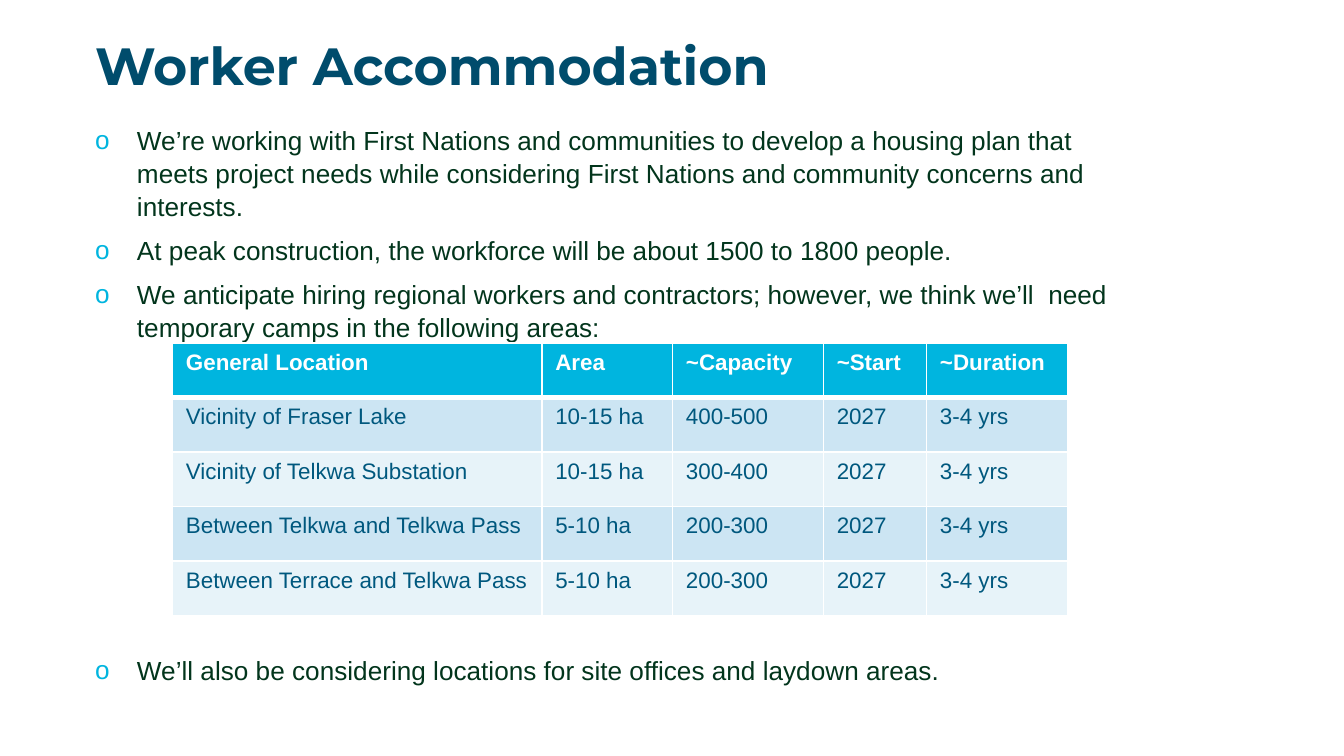
from lxml.etree import SubElement
from pptx import Presentation
from pptx.dml.color import RGBColor
from pptx.oxml.ns import qn
from pptx.util import Cm, Pt

NAVY = RGBColor(0x00, 0x4C, 0x6C)
GREEN = RGBColor(0x02, 0x35, 0x1C)
CYAN = RGBColor(0x00, 0xB5, 0xDF)
BLUE = RGBColor(0x00, 0x58, 0x7E)
LIGHT = RGBColor(0xCC, 0xE5, 0xF3)
PALE = RGBColor(0xE7, 0xF3, 0xF9)
WHITE = RGBColor(0xFF, 0xFF, 0xFF)

TITLE_FORMAT = {"name": "Montserrat", "size": Pt(28), "bold": True}
BODY_FORMAT = {"name": "Arial", "size": Pt(14), "bold": False}
HEADER_FORMAT = {"name": "Arial", "size": Pt(12), "bold": True}
CELL_FORMAT = {"name": "Arial", "size": Pt(12), "bold": False}
SPACING = {"space_before": Pt(3), "space_after": Pt(3), "line_spacing": 1.05}


def write(paragraph, text, format_values, color):
    run = paragraph.add_run()
    run.text = text
    for name, value in format_values.items():
        setattr(run.font, name, value)
    run.font.color.rgb = color


def add_border(cell, side, width):
    line = SubElement(cell._tc.get_or_add_tcPr(), qn(f"a:{side}"), w=str(Pt(width)))
    fill = SubElement(line, qn("a:solidFill"))
    SubElement(fill, qn("a:srgbClr"), val=str(WHITE))


presentation = Presentation()
presentation.slide_width = Cm(25.4)
presentation.slide_height = Cm(14.28)
slide = presentation.slides.add_slide(presentation.slide_layouts[6])

title = slide.shapes.add_textbox(Cm(1.55), Cm(0.5), Cm(21.4), Cm(2.15))
title.text_frame.word_wrap = True
write(title.text_frame.paragraphs[0], "Worker Accommodation", TITLE_FORMAT, NAVY)

points = [
    "We’re working with First Nations and communities to develop a housing plan that meets "
    "project needs while considering First Nations and community concerns and interests.",
    "At peak construction, the workforce will be about 1500 to 1800 people.",
    "We anticipate hiring regional workers and contractors; however, we think we’ll  need "
    "temporary camps in the following areas:",
    "We’ll also be considering locations for site offices and laydown areas.",
]
body = slide.shapes.add_textbox(Cm(1.55), Cm(2.2), Cm(19.86), Cm(11.4))
frame = body.text_frame
frame.word_wrap = True
for index, point in enumerate(points):
    paragraph = frame.add_paragraph() if index else frame.paragraphs[0]
    properties = paragraph._p.get_or_add_pPr()
    properties.set("marL", str(Cm(0.79)))
    properties.set("indent", str(Cm(-0.79)))
    bullet_color = SubElement(properties, qn("a:buClr"))
    SubElement(bullet_color, qn("a:srgbClr"), val=str(CYAN))
    SubElement(properties, qn("a:buFont"), typeface="Arial")
    SubElement(properties, qn("a:buChar"), char="o")
    for name, value in SPACING.items():
        setattr(paragraph, name, value)
    write(paragraph, point, BODY_FORMAT, GREEN)
frame.paragraphs[0].space_before = Pt(0)
frame.paragraphs[-1].space_before = Pt(163)

camps = [
    ("General Location", "Area", "~Capacity", "~Start", "~Duration"),
    ("Vicinity of Fraser Lake", "10-15 ha", "400-500", "2027", "3-4 yrs"),
    ("Vicinity of Telkwa Substation", "10-15 ha", "300-400", "2027", "3-4 yrs"),
    ("Between Telkwa and Telkwa Pass", "5-10 ha", "200-300", "2027", "3-4 yrs"),
    ("Between Terrace and Telkwa Pass", "5-10 ha", "200-300", "2027", "3-4 yrs"),
]
column_widths = [6.98, 2.47, 2.85, 1.95, 2.67]
row_height = 1.03
table = slide.shapes.add_table(
    len(camps), len(column_widths), Cm(3.26), Cm(6.48),
    Cm(sum(column_widths)), Cm(row_height * len(camps)),
).table
for column, width in zip(table.columns, column_widths):
    column.width = Cm(width)
for row_index, camp in enumerate(camps):
    table.rows[row_index].height = Cm(row_height)
    header = row_index == 0
    fill_color = CYAN if header else (PALE, LIGHT)[row_index % 2]
    for column_index, text in enumerate(camp):
        cell = table.cell(row_index, column_index)
        add_border(cell, "lnL", 1)
        add_border(cell, "lnR", 1)
        add_border(cell, "lnT", 3 if row_index == 1 else 1)
        add_border(cell, "lnB", 3 if header else 1)
        cell.fill.solid()
        cell.fill.fore_color.rgb = fill_color
        write(
            cell.text_frame.paragraphs[0], text,
            HEADER_FORMAT if header else CELL_FORMAT, WHITE if header else BLUE,
        )

presentation.save("out.pptx")
